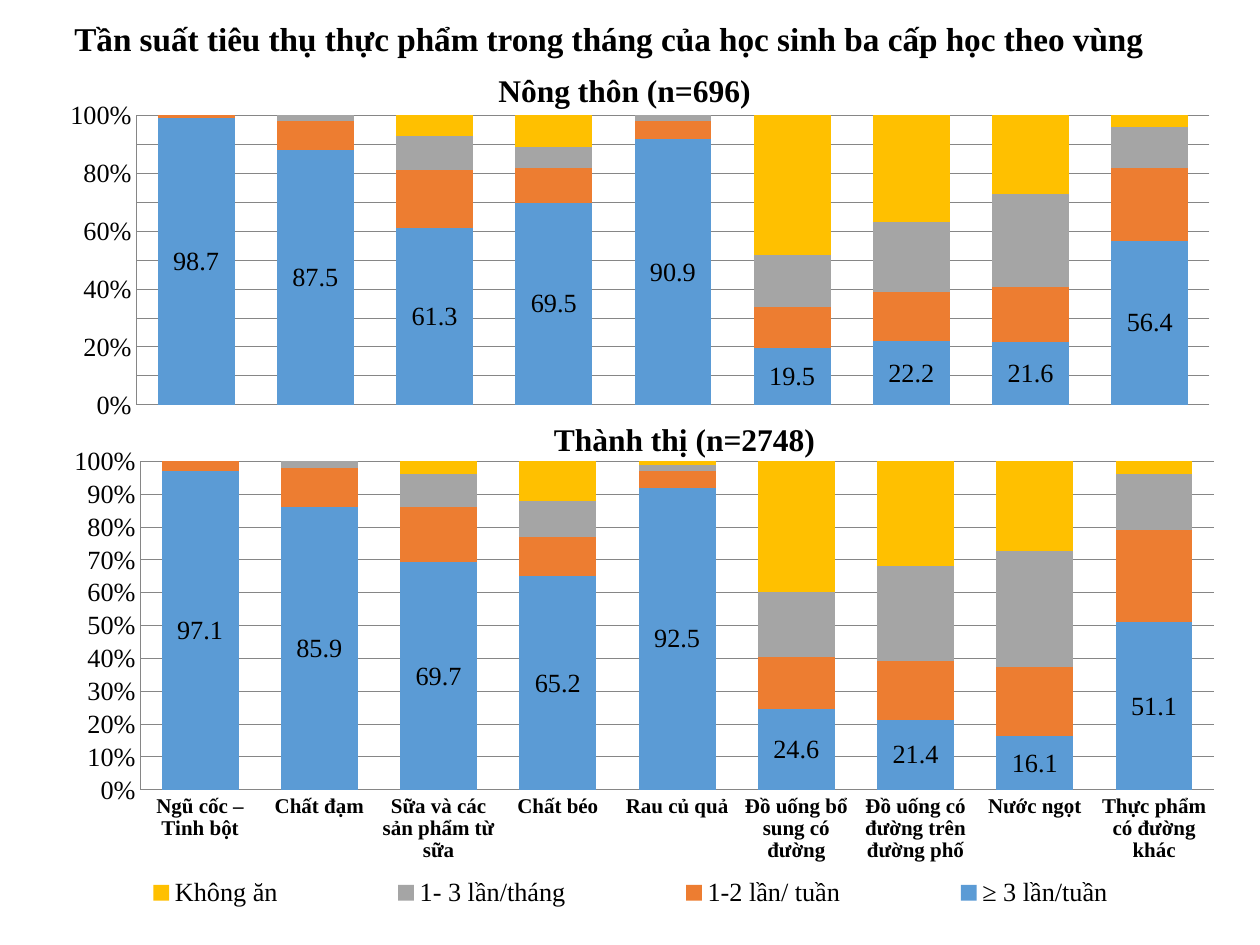
"""Build a slide with two stacked charts of food consumption frequency by region."""
from lxml import etree
from pptx import Presentation
from pptx.chart.data import CategoryChartData
from pptx.dml.color import RGBColor
from pptx.enum.chart import XL_CHART_TYPE, XL_LABEL_POSITION, XL_LEGEND_POSITION, XL_TICK_MARK
from pptx.enum.text import MSO_ANCHOR, PP_ALIGN
from pptx.oxml.ns import qn
from pptx.util import Pt

STACKED = XL_CHART_TYPE.COLUMN_STACKED_100
CENTER = XL_LABEL_POSITION.CENTER
RIGHT = XL_LEGEND_POSITION.RIGHT
NO_TICK = XL_TICK_MARK.NONE
LEFT = PP_ALIGN.LEFT
MIDDLE = MSO_ANCHOR.MIDDLE

FONT = "Times New Roman"
BLACK = RGBColor(0x00, 0x00, 0x00)
GRAY = RGBColor(0x86, 0x86, 0x86)
SERIES_COLORS = [
    RGBColor(0x5B, 0x9B, 0xD5),
    RGBColor(0xED, 0x7D, 0x31),
    RGBColor(0xA5, 0xA5, 0xA5),
    RGBColor(0xFF, 0xC0, 0x00),
]

FREQUENCIES = ["≥ 3 lần/tuần", "1-2 lần/ tuần", "1- 3 lần/tháng", "Không ăn"]
FOODS = [
    "Ngũ cốc – Tinh bột", "Chất đạm", "Sữa và các sản phẩm từ sữa",
    "Chất béo", "Rau củ quả", "Đồ uống bổ sung có đường",
    "Đồ uống có đường trên đường phố", "Nước ngọt", "Thực phẩm có đường khác",
]
REGIONS = [
    {
        "title": "Thành thị (n=2748)",
        "box": (23.76, 234, 673.2, 293.76),
        "title_at": (0.43, 0.01),
        "plot": (0.084, 0.101, 0.911, 0.639),
        "legend": (0, 0.9, 1, 0.08),
        "values": [
            (97.1, 85.9, 69.7, 65.2, 92.5, 24.6, 21.4, 16.1, 51.1),
            (3, 12, 17, 12, 5, 16, 18, 21, 28),
            (0, 2, 10, 11, 2, 20, 29, 35, 17),
            (0, 0, 4, 12, 1, 40, 32, 27, 4),
        ],
    },
    {
        "title": "Nông thôn (n=696)",
        "box": (23.76, 37.44, 678.24, 202.32),
        "title_at": (0.38, 0),
        "plot": (0.08, 0.141, 0.904, 0.818),
        "legend": None,
        "values": [
            (98.7, 87.5, 61.3, 69.5, 90.9, 19.5, 22.2, 21.6, 56.4),
            (1, 10, 20, 12, 6, 14, 17, 19, 25),
            (0, 2, 12, 7, 2, 18, 24, 32, 14),
            (0, 0, 7, 11, 0, 48, 37, 27, 4),
        ],
    },
]


def set_font(font, size, bold=False):
    font.name, font.size, font.bold = FONT, Pt(size), bold
    font.color.rgb = BLACK


def set_layout(parent, index, fractions, inner=False):
    for old in parent.findall(qn("c:layout")):
        parent.remove(old)
    layout = etree.Element(qn("c:layout"))
    manual = etree.SubElement(layout, qn("c:manualLayout"))
    settings = [("layoutTarget", "inner")] if inner else []
    settings += [("xMode", "edge"), ("yMode", "edge")]
    settings += zip("xywh", fractions)
    for tag, value in settings:
        etree.SubElement(manual, qn(f"c:{tag}")).set("val", str(value))
    parent.insert(index, layout)


prs = Presentation()
prs.slide_width, prs.slide_height = Pt(720), Pt(540)
s = prs.slides.add_slide(prs.slide_layouts[5])

title = s.shapes.title
title.left, title.top, title.width, title.height = Pt(35.28), Pt(6.48), Pt(637.92), Pt(30.24)
tf = title.text_frame
tf.text = "Tần suất tiêu thụ thực phẩm trong tháng của học sinh ba cấp học theo vùng"
tf.vertical_anchor = MIDDLE
p = tf.paragraphs[0]
p.alignment = LEFT
set_font(p.font, 19, True)

for region in REGIONS:
    data = CategoryChartData()
    data.categories = FOODS
    for name, values in zip(FREQUENCIES, region["values"]):
        data.add_series(name, values)
    box = [Pt(v) for v in region["box"]]
    chart = s.shapes.add_chart(STACKED, *box, data).chart
    set_font(chart.font, 15)

    tf = chart.chart_title.text_frame
    tf.text = region["title"]
    set_font(tf.paragraphs[0].font, 18, True)
    set_layout(chart.chart_title._element, 1, region["title_at"])
    set_layout(chart._chartSpace.chart.plotArea, 0, region["plot"], inner=True)

    plot = chart.plots[0]
    plot.gap_width, plot.overlap = 55, 100
    plot.vary_by_categories = False
    for series, color in zip(plot.series, SERIES_COLORS):
        series.format.fill.solid()
        series.format.fill.fore_color.rgb = color
    labels = plot.series[0].data_labels
    labels.show_value = True
    labels.position = CENTER
    labels.number_format, labels.number_format_is_linked = "0.0", False
    set_font(labels.font, 15)

    axis = chart.value_axis
    axis.minimum_scale, axis.maximum_scale, axis.major_unit = 0, 1, 0.1
    axis.major_tick_mark = NO_TICK
    axis.tick_labels.number_format = "0%"
    axis.tick_labels.number_format_is_linked = False
    set_font(axis.tick_labels.font, 15)
    body = axis._element.find(qn("c:txPr")).find(qn("a:bodyPr"))
    body.set("rot", "0")
    body.set("vert", "horz")
    axis.has_major_gridlines = True
    cat_axis = chart.category_axis
    cat_axis.major_tick_mark = NO_TICK
    for line in (axis.major_gridlines.format.line, axis.format.line, cat_axis.format.line):
        line.color.rgb = GRAY
        line.width = Pt(0.5)

    chart.has_legend = region["legend"] is not None
    cat_axis.visible = chart.has_legend
    if chart.has_legend:
        set_font(cat_axis.tick_labels.font, 12, True)
        chart.legend.position = RIGHT
        chart.legend.include_in_layout = False
        set_font(chart.legend.font, 15)
        set_layout(chart.legend._element, 1, region["legend"])

prs.save("out.pptx")
